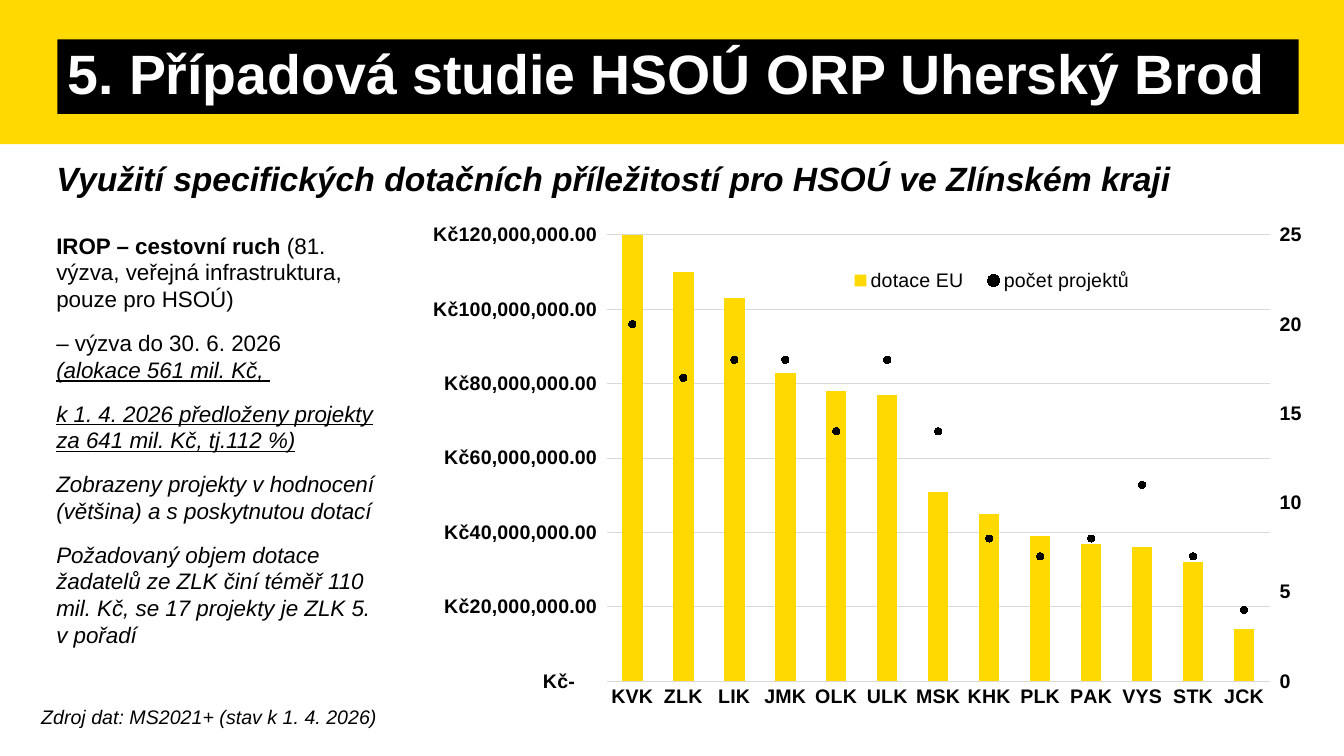
from copy import deepcopy

from pptx import Presentation
from pptx.chart.axis import CategoryAxis, ValueAxis
from pptx.chart.data import CategoryChartData
from pptx.dml.color import RGBColor
from pptx.enum.chart import XL_CHART_TYPE, XL_LEGEND_POSITION, XL_MARKER_STYLE, XL_TICK_MARK
from pptx.enum.shapes import MSO_SHAPE
from pptx.enum.text import MSO_ANCHOR, MSO_AUTO_SIZE, PP_ALIGN
from pptx.oxml import parse_xml
from pptx.oxml.ns import qn
from pptx.util import Inches, Pt

CHART_NS = "http://schemas.openxmlformats.org/drawingml/2006/chart"
CURRENCY = '_("Kč"* #,##0.00_);_("Kč"* \\(#,##0.00\\);_("Kč"* "-"??_);_(@_)'


def color(hex_value):
    return RGBColor.from_string(hex_value)


def place(shape, left, top, width, height):
    shape.left, shape.top = Inches(left), Inches(top)
    shape.width, shape.height = Inches(width), Inches(height)


def set_layout(parent, position, inner, x, y, w, h):
    for old in parent.findall(qn("c:layout")):
        parent.remove(old)
    target = '<c:layoutTarget val="inner"/>' if inner else ""
    layout = parse_xml(
        f'<c:layout xmlns:c="{CHART_NS}"><c:manualLayout>{target}'
        '<c:xMode val="edge"/><c:yMode val="edge"/>'
        f'<c:x val="{x}"/><c:y val="{y}"/><c:w val="{w}"/><c:h val="{h}"/>'
        '</c:manualLayout></c:layout>')
    parent.insert(position, layout)


class CaseStudySlide:
    FONT = "Arial"
    YELLOW, BLACK, WHITE, GRID = "FFD900", "000000", "FFFFFF", "D9D9D9"

    def __init__(self, presentation):
        self.slide = presentation.slides.add_slide(presentation.slide_layouts[5])

    def style(self, font, size, hex_value=BLACK, bold=False, italic=False, underline=False):
        font.name, font.size = self.FONT, Pt(size)
        font.color.rgb = color(hex_value)
        font.bold, font.italic, font.underline = bold, italic, underline

    def band(self, *box):
        band = self.slide.shapes.add_shape(MSO_SHAPE.RECTANGLE, *map(Inches, box))
        band.shadow.inherit = False
        band.fill.solid()
        band.fill.fore_color.rgb = color(self.YELLOW)
        band.line.fill.background()
        self.slide.shapes.element.insert(2, band.element)

    def title(self, words, *box):
        title = self.slide.shapes.title
        place(title, *box)
        title.fill.solid()
        title.fill.fore_color.rgb = color(self.BLACK)
        frame = title.text_frame
        frame.auto_size = MSO_AUTO_SIZE.NONE
        frame.vertical_anchor = MSO_ANCHOR.MIDDLE
        heading = frame.paragraphs[0]
        heading.alignment, heading.line_spacing = PP_ALIGN.LEFT, 0.9
        run = heading.add_run()
        run.text = words
        self.style(run.font, 39.6, self.WHITE, bold=True)

    def text(self, paragraphs, size, *box, after=0):
        frame = self.slide.shapes.add_textbox(*map(Inches, box)).text_frame
        frame.word_wrap = True
        for index, runs in enumerate(paragraphs):
            paragraph = frame.add_paragraph() if index else frame.paragraphs[0]
            paragraph.space_after = Pt(after)
            for words, marks in runs:
                if words == "\n":
                    paragraph.add_line_break()
                    continue
                run = paragraph.add_run()
                run.text = words
                self.style(run.font, size, bold="b" in marks,
                           italic="i" in marks, underline="u" in marks)

    def scale(self, axis, maximum, step, number_format):
        axis.minimum_scale, axis.maximum_scale, axis.major_unit = 0, maximum, step
        axis.tick_labels.number_format = number_format
        axis.tick_labels.number_format_is_linked = False

    def combined_chart(self, regions, grants, projects, *box):
        data = CategoryChartData()
        data.categories = regions
        data.add_series("dotace EU", grants)
        data.add_series("počet projektů", projects)
        chart = self.slide.shapes.add_chart(
            XL_CHART_TYPE.COLUMN_CLUSTERED, *map(Inches, box), data).chart
        chart.has_title = False
        self.style(chart.font, 10)

        columns = chart.plots[0]
        columns.gap_width, columns.vary_by_categories = 150, False
        grant_columns = columns.series[0]
        grant_columns.format.fill.solid()
        grant_columns.format.fill.fore_color.rgb = color(self.YELLOW)

        for axis in (chart.category_axis, chart.value_axis):
            axis.major_tick_mark = axis.minor_tick_mark = XL_TICK_MARK.NONE
            self.style(axis.tick_labels.font, 14, bold=True)
        grant_axis = chart.value_axis
        grant_axis.format.line.fill.background()
        self.scale(grant_axis, 120_000_000, 20_000_000, CURRENCY)
        for line in (grant_axis.major_gridlines.format.line, chart.category_axis.format.line):
            line.color.rgb, line.width = color(self.GRID), Pt(0.75)

        self.add_project_points(chart)
        self.add_legend(chart)
        set_layout(chart.element.find(".//" + qn("c:plotArea")), 0, True,
                   0.217, 0.041, 0.728, 0.822)

    def add_project_points(self, chart):
        plot_area = chart.element.find(".//" + qn("c:plotArea"))
        columns = plot_area.find(qn("c:barChart"))
        project_series = columns.findall(qn("c:ser"))[1]
        for bar_only in project_series.findall(qn("c:invertIfNegative")):
            project_series.remove(bar_only)
        points = parse_xml(
            f'<c:lineChart xmlns:c="{CHART_NS}"><c:grouping val="standard"/>'
            '<c:varyColors val="0"/><c:marker val="1"/>'
            '<c:axId val="5001"/><c:axId val="5002"/></c:lineChart>')
        points.insert(2, project_series)
        columns.addnext(points)

        category_copy = deepcopy(plot_area.find(qn("c:catAx")))
        value_copy = deepcopy(plot_area.find(qn("c:valAx")))
        plot_area.find(qn("c:valAx")).addnext(value_copy)
        value_copy.addnext(category_copy)
        for axis, own, other in ((category_copy, "5001", "5002"), (value_copy, "5002", "5001")):
            axis.find(qn("c:axId")).set("val", own)
            axis.find(qn("c:crossAx")).set("val", other)
        value_copy.find(qn("c:axPos")).set("val", "r")
        value_copy.find(qn("c:crosses")).set("val", "max")
        CategoryAxis(category_copy).visible = False
        project_axis = ValueAxis(value_copy)
        project_axis.has_major_gridlines = False
        project_axis.major_tick_mark = XL_TICK_MARK.OUTSIDE
        self.scale(project_axis, 25, 5, "General")

        project_points = chart.plots[1].series[0]
        project_points.smooth = False
        project_points.format.line.fill.background()
        marker = project_points.marker
        marker.style, marker.size = XL_MARKER_STYLE.CIRCLE, 5
        marker.format.fill.solid()
        marker.format.fill.fore_color.rgb = color(self.BLACK)
        marker.format.line.color.rgb = color(self.BLACK)

    def add_legend(self, chart):
        chart.has_legend = True
        legend = chart.legend
        legend.position = XL_LEGEND_POSITION.BOTTOM
        legend.include_in_layout = False
        self.style(legend.font, 14)
        set_layout(chart.element.find(".//" + qn("c:legend")), 1, False,
                   0.47, 0.09, 0.34, 0.07)


def main():
    presentation = Presentation()
    presentation.slide_width, presentation.slide_height = Inches(13.33), Inches(7.5)
    page = CaseStudySlide(presentation)
    page.band(0, 0, 13.33, 1.43)
    page.title("5. Případová studie HSOÚ ORP Uherský Brod", 0.57, 0.39, 12.31, 0.74)
    page.text([[("Využití specifických dotačních příležitostí pro HSOÚ ve Zlínském kraji", "bi")]],
              24, 0.46, 1.52, 12.32, 0.59, after=12)
    regions = ["KVK", "ZLK", "LIK", "JMK", "OLK", "ULK", "MSK",
               "KHK", "PLK", "PAK", "VYS", "STK", "JCK"]
    grant_millions = [120, 110, 103, 83, 78, 77, 51, 45, 39, 37, 36, 32, 14]
    projects = [20, 17, 18, 18, 14, 18, 14, 8, 7, 8, 11, 7, 4]
    page.combined_chart(regions, [grant * 1_000_000 for grant in grant_millions], projects,
                        4.06, 2.11, 9.03, 5.39)
    page.text([
        [("IROP – cestovní ruch ", "b"),
         ("(81. výzva, veřejná infrastruktura, pouze pro HSOÚ)", "")],
        [("– výzva do 30. 6. 2026", ""), ("\n", ""), ("(alokace 561 mil. Kč, ", "iu")],
        [("k 1. 4. 2026 předloženy projekty za 641 mil. Kč, tj.112 %)", "iu")],
        [("Zobrazeny projekty v hodnocení (většina) a s poskytnutou dotací", "i")],
        [("Požadovaný objem dotace žadatelů ze ZLK činí téměř 110 mil. Kč, "
          "se 17 projekty je ZLK 5. v pořadí", "i")],
    ], 16, 0.46, 2.25, 3.48, 4.27, after=12)
    page.text([[("Zdroj dat: MS2021+ (stav k 1. 4. 2026)", "i")]], 14, 0.31, 6.94, 6.67, 0.34)
    presentation.save("out.pptx")


if __name__ == "__main__":
    main()
